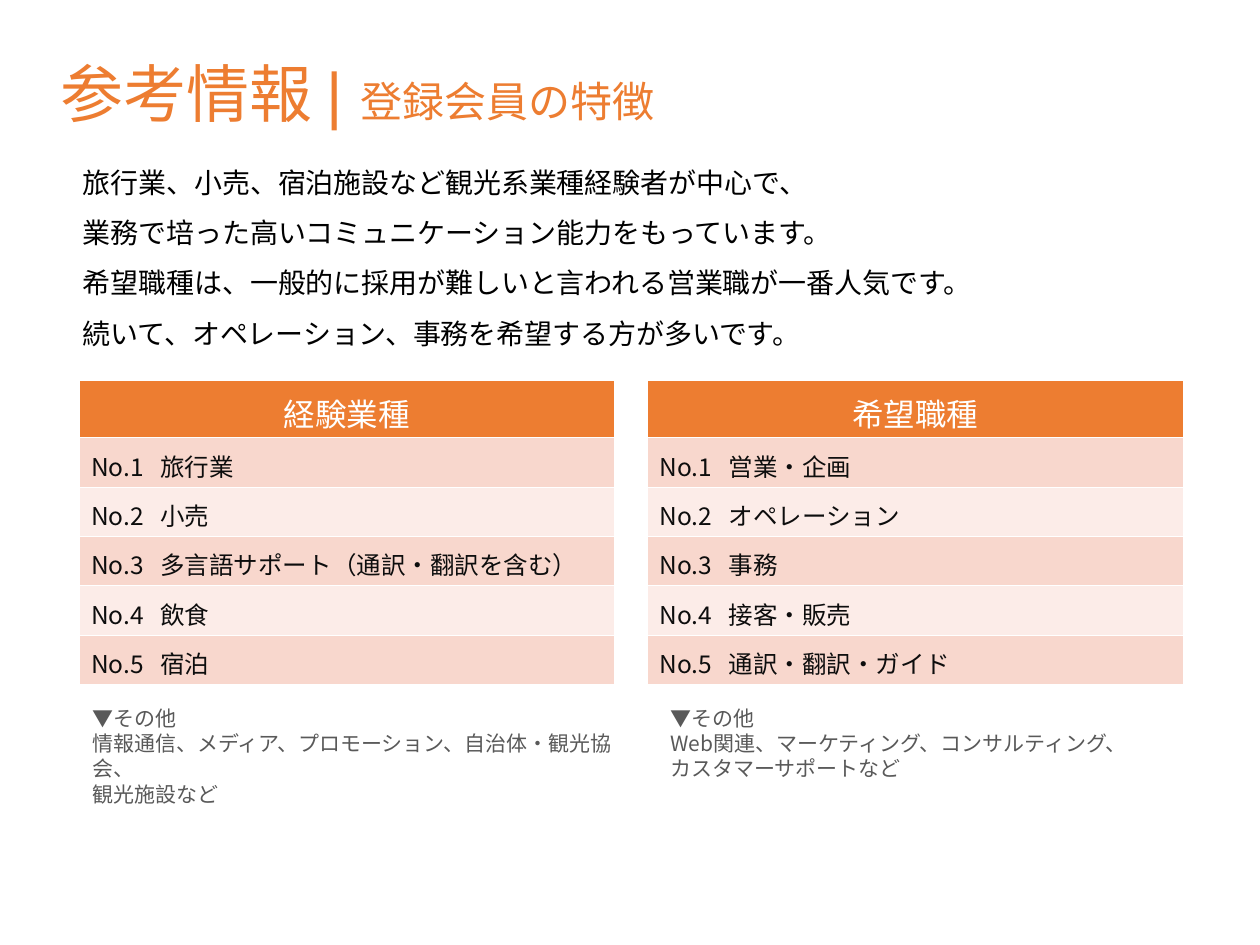
import lxml.etree
import pptx
import pptx.dml.color
import pptx.enum.text
import pptx.oxml
import pptx.oxml.ns
import pptx.util
from pptx.util import Cm

FONT = "Noto Sans CJK JP"
ORANGE = "ED7D31"
WHITE = "FFFFFF"
BANDS = ("F8D7CD", "FCECE8")
HEADER_HEIGHT = 1.16
ROW_HEIGHT = 0.99
NUMBER_WIDTH = 1.52
ALIGN = pptx.enum.text.PP_ALIGN
ANCHOR = pptx.enum.text.MSO_ANCHOR


def color(value):
    return pptx.dml.color.RGBColor.from_string(value)


def add_run(paragraph, text, size, fill, font=FONT):
    run = paragraph.add_run()
    run.text = text
    run.font.size = pptx.util.Pt(size)
    run.font.name = font
    run.font.color.rgb = color(fill)
    properties = run.font._element
    east_asian = lxml.etree.SubElement(properties, pptx.oxml.ns.qn("a:ea"))
    east_asian.set("typeface", FONT)


def add_text_box(slide, box, wrap=True):
    shape = slide.shapes.add_textbox(*map(Cm, box))
    shape.text_frame.word_wrap = wrap
    shape.text_frame.auto_size = pptx.enum.text.MSO_AUTO_SIZE.SHAPE_TO_FIT_TEXT
    return shape.text_frame


def add_title(slide, box, heading, subject):
    paragraph = add_text_box(slide, box, wrap=True).paragraphs[0]
    add_run(paragraph, heading, 36, ORANGE, font="Arial")
    add_run(paragraph, subject, 24, ORANGE, font="Arial")


def add_lines(slide, box, lines, size, fill, spacing=None):
    frame = add_text_box(slide, box)
    for index, line in enumerate(lines):
        paragraph = frame.add_paragraph() if index else frame.paragraphs[0]
        paragraph.line_spacing = spacing
        add_run(paragraph, line, size, fill)


def set_borders(cell):
    properties = cell._tc.get_or_add_tcPr()
    for side in ("lnL", "lnR", "lnT", "lnB"):
        line = lxml.etree.SubElement(properties, pptx.oxml.ns.qn("a:" + side))
        if side in ("lnL", "lnR"):
            line.set("w", "0")
            lxml.etree.SubElement(line, pptx.oxml.ns.qn("a:noFill"))
        else:
            line.set("w", str(pptx.util.Pt(0.5)))
            solid = lxml.etree.SubElement(line, pptx.oxml.ns.qn("a:solidFill"))
            lxml.etree.SubElement(solid, pptx.oxml.ns.qn("a:srgbClr")).set("val", WHITE)


def format_cell(cell, fill, anchor):
    set_borders(cell)
    cell.fill.solid()
    cell.fill.fore_color.rgb = color(fill)
    cell.margin_left = cell.margin_right = Cm(0.1)
    cell.margin_top = cell.margin_bottom = Cm(0.2)
    cell.vertical_anchor = anchor


def add_ranking(slide, box, heading, entries):
    table = slide.shapes.add_table(len(entries) + 1, 2, *map(Cm, box)).table
    table.columns[0].width = Cm(NUMBER_WIDTH)
    table.columns[1].width = Cm(box[2] - NUMBER_WIDTH)
    table.rows[0].height = Cm(HEADER_HEIGHT)
    for cell in table.rows[0].cells:
        format_cell(cell, ORANGE, ANCHOR.TOP)
    header = table.cell(0, 0)
    header.merge(table.cell(0, 1))
    paragraph = header.text_frame.paragraphs[0]
    paragraph.alignment = ALIGN.CENTER
    add_run(paragraph, heading, 18, WHITE)
    for rank, entry in enumerate(entries, 1):
        table.rows[rank].height = Cm(ROW_HEIGHT)
        contents = ((f"No.{rank}", ALIGN.CENTER), (entry, ALIGN.LEFT))
        for column, (text, alignment) in enumerate(contents):
            cell = table.cell(rank, column)
            format_cell(cell, BANDS[(rank - 1) % 2], ANCHOR.MIDDLE)
            paragraph = cell.text_frame.paragraphs[0]
            paragraph.alignment = alignment
            add_run(paragraph, text, 14, "0D0D0D")


def main():
    presentation = pptx.Presentation()
    presentation.slide_width = Cm(25.4)
    presentation.slide_height = Cm(19.05)
    slide = presentation.slides.add_slide(presentation.slide_layouts[6])

    introduction = (
        "旅行業、小売、宿泊施設など観光系業種経験者が中心で、",
        "業務で培った高いコミュニケーション能力をもっています。",
        "希望職種は、一般的に採用が難しいと言われる営業職が一番人気です。",
        "続いて、オペレーション、事務を希望する方が多いです。",
    )
    add_lines(slide, (1.42, 2.87, 22.73, 4.27), introduction, 16, "000000", spacing=1.5)

    industry_notes = ("▼その他", "情報通信、メディア、プロモーション、自治体・観光協会、", "観光施設など")
    job_notes = ("▼その他", "Web関連、マーケティング、コンサルティング、", "カスタマーサポートなど")
    add_lines(slide, (1.61, 14.1, 11.18, 1.8), industry_notes, 12, "595959")
    add_lines(slide, (13.26, 14.1, 10.77, 1.8), job_notes, 12, "595959")

    industries = ("旅行業", "小売", "多言語サポート（通訳・翻訳を含む）", "飲食", "宿泊")
    jobs = ("営業・企画", "オペレーション", "事務", "接客・販売", "通訳・翻訳・ガイド")
    add_ranking(slide, (1.61, 7.66, 10.77, 6.11), "経験業種", industries)
    add_ranking(slide, (13.07, 7.66, 10.77, 6.11), "希望職種", jobs)

    add_title(slide, (0.97, 0.97, 13.4, 1.8), "参考情報 | ", "登録会員の特徴")
    presentation.save("out.pptx")


if __name__ == "__main__":
    main()
